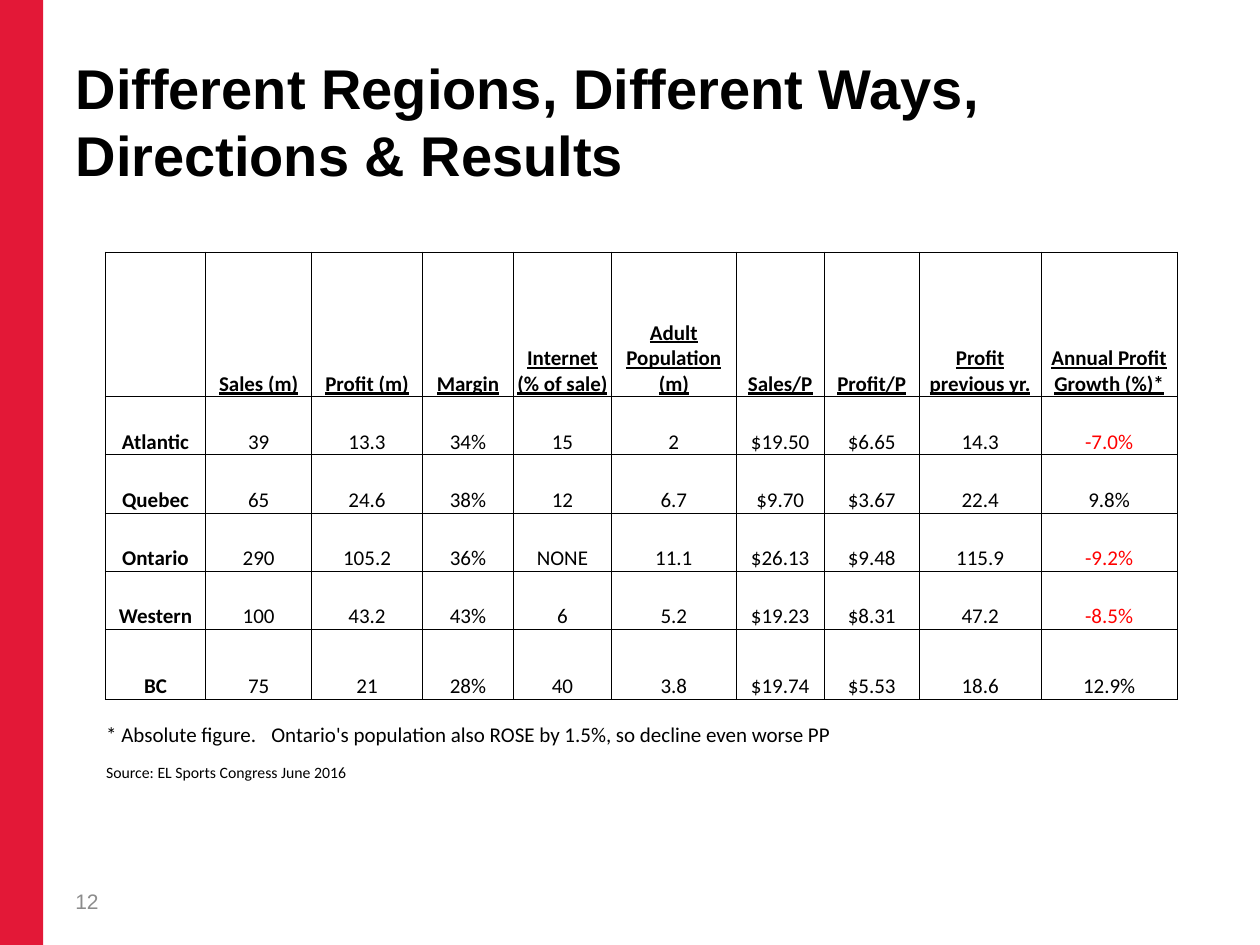
from dataclasses import dataclass
from lxml.etree import SubElement as Sub
from pptx import Presentation
from pptx.dml.color import RGBColor as Rgb
from pptx.enum.shapes import MSO_SHAPE as Shape
from pptx.enum.text import MSO_ANCHOR as Anchor, MSO_AUTO_SIZE as Fit, PP_ALIGN as Align
from pptx.oxml.ns import qn
from pptx.util import Cm, Pt


@dataclass(frozen=True)
class Theme:
    head: str = "Arial"
    body: str = "Calibri"
    ink: str = "000000"
    bar: str = "E31837"
    loss: str = "FF0000"
    gray: str = "8C8C8C"
    big: int = 32
    text: int = 12
    small: int = 9
    rule: float = 0.5
    plain: str = "{2D5ABB26-0587-4C30-8999-92F81FD0307C}"  # no style, no grid


class Deck:
    def __init__(self, theme):
        self.theme = theme
        self.prs = Presentation()
        self.prs.slide_width, self.prs.slide_height = Cm(25.4), Cm(19.05)
        self.slide = self.prs.slides.add_slide(self.prs.slide_layouts[5])

    def style(self, frame, size, font, color, bold=False, line=False, align=Align.LEFT):
        for par in frame.paragraphs:
            par.alignment = align
            for run in par.runs:
                face = run.font
                face.size, face.name = Pt(size), font
                face.bold, face.underline = bold, line
                face.color.rgb = Rgb.from_string(color)

    def bar(self, x, y, w, h):
        box = self.slide.shapes.add_shape(Shape.RECTANGLE, Cm(x), Cm(y), Cm(w), Cm(h))
        box.shadow.inherit = False
        box.fill.solid()
        box.fill.fore_color.rgb = Rgb.from_string(self.theme.bar)
        box.line.fill.background()

    def title(self, text, x, y, w, h):
        box = self.slide.shapes.title
        box.left, box.top, box.width, box.height = Cm(x), Cm(y), Cm(w), Cm(h)
        frame = box.text_frame
        frame.text = text
        frame.auto_size, frame.vertical_anchor = Fit.NONE, Anchor.MIDDLE
        self.style(frame, self.theme.big, self.theme.head, self.theme.ink, bold=True)

    def label(self, text, x, y, w, h):
        frame = self.slide.shapes.add_textbox(Cm(x), Cm(y), Cm(w), Cm(h)).text_frame
        frame.text = text
        frame.word_wrap, frame.vertical_anchor = True, Anchor.MIDDLE
        self.style(frame, self.theme.text, self.theme.head, self.theme.gray)

    def table(self, x, y, cols, rows):
        grid = self.slide.shapes.add_table(
            len(rows), len(cols), Cm(x), Cm(y), Cm(sum(cols)), Cm(sum(rows))).table
        grid.first_row = grid.horz_banding = False
        grid._tbl.tblPr.find(qn("a:tableStyleId")).text = self.theme.plain
        for col, size in zip(grid.columns, cols):
            col.width = Cm(size)
        for row, size in zip(grid.rows, rows):
            row.height = Cm(size)
        for cell in grid.iter_cells():
            cell.margin_left = cell.margin_right = cell.margin_top = Cm(0.02)
            cell.margin_bottom = 0
            cell.vertical_anchor = Anchor.BOTTOM
        return grid

    def border(self, cell):
        for side in ("lnL", "lnR", "lnT", "lnB"):
            line = Sub(cell._tc.get_or_add_tcPr(), qn("a:" + side), w=str(Pt(self.theme.rule)))
            fill = Sub(line, qn("a:solidFill"))
            Sub(fill, qn("a:srgbClr"), val=self.theme.ink)

    def cell(self, cell, text, bold=False, line=False):
        cell.text = text
        self.border(cell)
        cell.fill.background()
        color = self.theme.loss if text.startswith("-") else self.theme.ink
        self.style(cell.text_frame, self.theme.text, self.theme.body, color,
                   bold, line, Align.CENTER)

    def note(self, first, last, text, size, stop=None):
        first.merge(last)
        first.text = text
        first.fill.background()
        if stop:
            tabs = Sub(first.text_frame.paragraphs[0]._p.get_or_add_pPr(), qn("a:tabLst"))
            Sub(tabs, qn("a:tab"), pos=str(Cm(stop)), algn="l")
        self.style(first.text_frame, size, self.theme.body, self.theme.ink)


HEADS = ["", "Sales (m)", "Profit (m)", "Margin", "Internet (% of sale)",
         "Adult Population (m)", "Sales/P", "Profit/P", "Profit previous yr.",
         "Annual Profit Growth (%)*"]
REGIONS = [
    ["Atlantic", "39", "13.3", "34%", "15", "2", "$19.50", "$6.65", "14.3", "-7.0%"],
    ["Quebec", "65", "24.6", "38%", "12", "6.7", "$9.70", "$3.67", "22.4", "9.8%"],
    ["Ontario", "290", "105.2", "36%", "NONE", "11.1", "$26.13", "$9.48", "115.9", "-9.2%"],
    ["Western", "100", "43.2", "43%", "6", "5.2", "$19.23", "$8.31", "47.2", "-8.5%"],
    ["BC", "75", "21", "28%", "40", "3.8", "$19.74", "$5.53", "18.6", "12.9%"],
]
COLS = [2.03, 2.13, 2.24, 1.83, 1.98, 2.51, 1.78, 1.91, 2.46, 2.74]
ROWS = [2.92] + [1.17] * 4 + [1.42] + [0.99] * 2


def main():
    theme = Theme()
    deck = Deck(theme)

    # Frame of the slide: side bar, title, page number
    deck.bar(0, 0, 0.87, 19.05)
    deck.title("Different Regions, Different Ways, Directions & Results",
               1.27, 0.84, 23.29, 3.18)
    deck.label("12", 1.27, 17.63, 1.27, 1.07)

    # Results by region
    grid = deck.table(2.12, 5.08, COLS, ROWS)
    for r, row in enumerate([HEADS] + REGIONS):
        for c, text in enumerate(row):
            deck.cell(grid.cell(r, c), text, bold=r == 0 or c == 0, line=r == 0)

    # Footnote and source below the grid
    deck.note(grid.cell(6, 0), grid.cell(6, 9),
              "* Absolute figure.\tOntario's population also ROSE by 1.5%, "
              "so decline even worse PP", theme.text, stop=3.33)
    deck.note(grid.cell(7, 0), grid.cell(7, 2),
              "Source: EL Sports Congress June 2016", theme.small)
    grid.cell(7, 0).vertical_anchor = Anchor.MIDDLE

    deck.prs.save("out.pptx")


if __name__ == "__main__":
    main()
